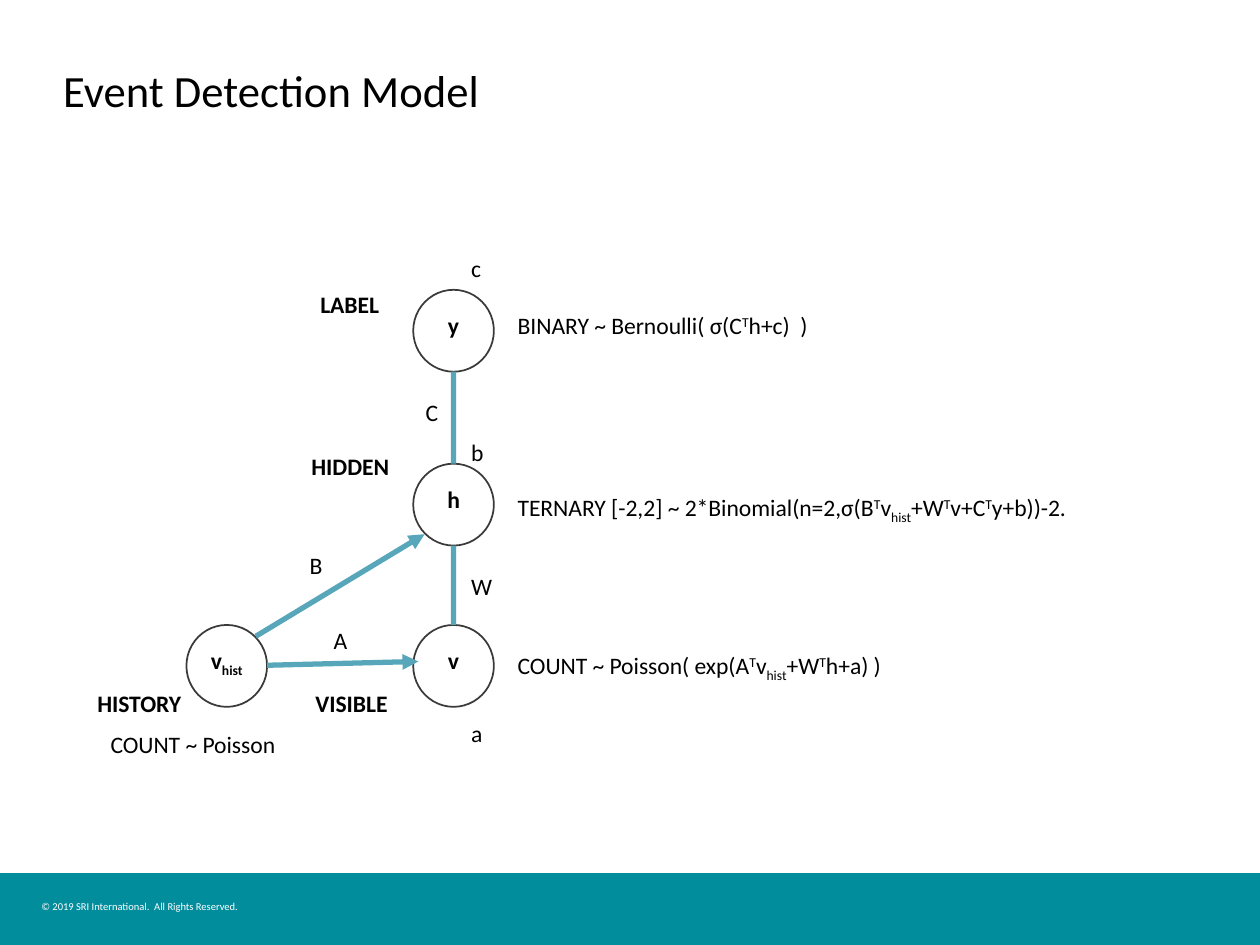
"""Build the event detection model slide."""
from lxml import etree
from pptx import Presentation
from pptx import util as u
from pptx.dml.color import RGBColor
from pptx.enum import shapes, text
from pptx.oxml.ns import qn

WHITE = RGBColor(0xFF, 0xFF, 0xFF)
BLACK = RGBColor(0, 0, 0)
TEAL = RGBColor(0x02, 0x8D, 0x9D)
OUTLINE = RGBColor(0x3A, 0x3B, 0x39)
LINK = RGBColor(0x57, 0xA6, 0xB9)

FONT, SIZE = "Calibri", 13.5
WIDTH, HEIGHT, BAND_TOP = 10, 7.5, 6.93
NODE_W, NODE_H, TEXT_H = 0.64, 0.65, 0.33
NODE_INSET, NODE_TEXT_DROP = 0.04, 0.12
HISTORY_X, MODEL_X, SIDE_X, FORMULA_X = 1.48, 3.28, 3.64, 4.01
LABEL_ROW, HIDDEN_ROW, VISIBLE_ROW = 2.3, 3.68, 4.96

T = ("T", 30)
HIST = ("hist", -25)

TITLE = "Event Detection Model"
COPYRIGHT = "© 2019 SRI International.  All Rights Reserved."
NODES = {
    "history": (HISTORY_X, VISIBLE_ROW, ["v", HIST]),
    "label": (MODEL_X, LABEL_ROW, ["y"]),
    "hidden": (MODEL_X, HIDDEN_ROW, ["h"]),
    "visible": (MODEL_X, VISIBLE_ROW, ["v"]),
}
ARROWS = [((2.12, 5.28), (3.32, 5.25)), ((2.03, 5.05), (3.37, 4.24))]
STACK_LINKS = [("visible", "hidden"), ("hidden", "label")]
HEADINGS = [
    ("LABEL", 2.39, 2.25, 0.77),
    ("VISIBLE", 2.39, 5.42, 0.8),
    ("HISTORY", 0.6, 5.42, 1.01),
    ("HIDDEN", 2.36, 3.54, 0.84),
]
NOTES = [
    (SIDE_X, 4.49, 0.37, ["W"]),
    (SIDE_X, 5.66, 0.29, ["a"]),
    (SIDE_X, 3.43, 0.3, ["b"]),
    (SIDE_X, 1.97, 0.28, ["c"]),
    (2.55, 4.92, 0.31, ["A"]),
    (2.36, 4.32, 0.31, ["B"]),
    (MODEL_X, 3.11, 0.3, ["C"]),
    (0.78, 5.74, 1.53, ["COUNT ~ Poisson"]),
    (FORMULA_X, 3.86, 4.7, ["TERNARY [-2,2] ~ 2*Binomial(n=2,σ(B", T, "v", HIST,
                            "+W", T, "v+C", T, "y+b))-2."]),
    (FORMULA_X, 5.12, 3.15, ["COUNT ~ Poisson( exp(A", T, "v", HIST, "+W", T, "h+a) )"]),
    (FORMULA_X, 2.42, 2.55, ["BINARY ~ Bernoulli( σ(C", T, "h+c)  )"]),
]


def inches(*values):
    return [u.Inches(v) for v in values]


def add_runs(p, runs, size=SIZE, color=BLACK, bold=False):
    for run in runs:
        content, baseline = (run, 0) if isinstance(run, str) else run
        r = p.add_run()
        r.text = content
        r.font.name, r.font.size, r.font.bold = FONT, u.Pt(size), bold
        r.font.color.rgb = color
        if baseline:
            r._r.get_or_add_rPr().set("baseline", str(baseline * 1000))


def add_text(s, x, y, w, runs, h=TEXT_H, centered=False, **style):
    tf = s.shapes.add_textbox(*inches(x, y, w, h)).text_frame
    tf.word_wrap = centered
    tf.auto_size = text.MSO_AUTO_SIZE.SHAPE_TO_FIT_TEXT
    p = tf.paragraphs[0]
    p.alignment = text.PP_ALIGN.CENTER if centered else text.PP_ALIGN.LEFT
    add_runs(p, runs, **style)


def add_shape(s, kind, x, y, w, h, fill, line=None):
    sp = s.shapes.add_shape(kind, *inches(x, y, w, h))
    sp.shadow.inherit = False
    sp.fill.solid()
    sp.fill.fore_color.rgb = fill
    if line is None:
        sp.line.fill.background()
    else:
        sp.line.color.rgb, sp.line.width = line, u.Pt(1)
    return sp


def add_link(s, start, end, arrow=False):
    cx = s.shapes.add_connector(shapes.MSO_CONNECTOR.STRAIGHT, *inches(*start, *end))
    cx.line.color.rgb, cx.line.width = LINK, u.Pt(3)
    if arrow:
        etree.SubElement(cx.line._get_or_add_ln(), qn("a:tailEnd"), type="triangle")
    etree.SubElement(cx._element.spPr, qn("a:effectLst"))
    return cx


def add_title(s):
    title = s.shapes.title
    title.left, title.top, title.width, title.height = inches(0.4, 0.4, 8.92, 0.67)
    tf = title.text_frame
    tf.auto_size = text.MSO_AUTO_SIZE.NONE
    tf.vertical_anchor = text.MSO_ANCHOR.MIDDLE
    p = tf.paragraphs[0]
    p.alignment, p.line_spacing = text.PP_ALIGN.LEFT, 0.9
    add_runs(p, [TITLE], size=25.5)


def add_node(s, x, y, runs):
    sp = add_shape(s, shapes.MSO_SHAPE.OVAL, x, y, NODE_W, NODE_H, WHITE, OUTLINE)
    add_text(s, x + NODE_INSET, y + NODE_TEXT_DROP, NODE_W - 2 * NODE_INSET, runs,
             centered=True, bold=True)
    return sp


def main():
    prs = Presentation()
    prs.slide_width, prs.slide_height = inches(WIDTH, HEIGHT)
    s = prs.slides.add_slide(prs.slide_layouts[5])
    add_shape(s, shapes.MSO_SHAPE.RECTANGLE, 0, BAND_TOP, WIDTH, HEIGHT - BAND_TOP, TEAL)
    add_text(s, 0.23, 7.09, 1.8, [COPYRIGHT], h=0.2, size=6, color=WHITE)
    add_title(s)
    circles = {name: add_node(s, *node) for name, node in NODES.items()}
    for start, end in ARROWS:
        add_link(s, start, end, arrow=True)
    center = MODEL_X + NODE_W / 2
    for lower, upper in STACK_LINKS:
        cx = add_link(s, (center, NODES[lower][1]), (center, NODES[upper][1] + NODE_H))
        cx.begin_connect(circles[lower], 0)
    for heading, x, y, w in HEADINGS:
        add_text(s, x, y, w, [heading], centered=True, bold=True)
    for x, y, w, runs in NOTES:
        add_text(s, x, y, w, runs)
    prs.save("out.pptx")


if __name__ == "__main__":
    main()
